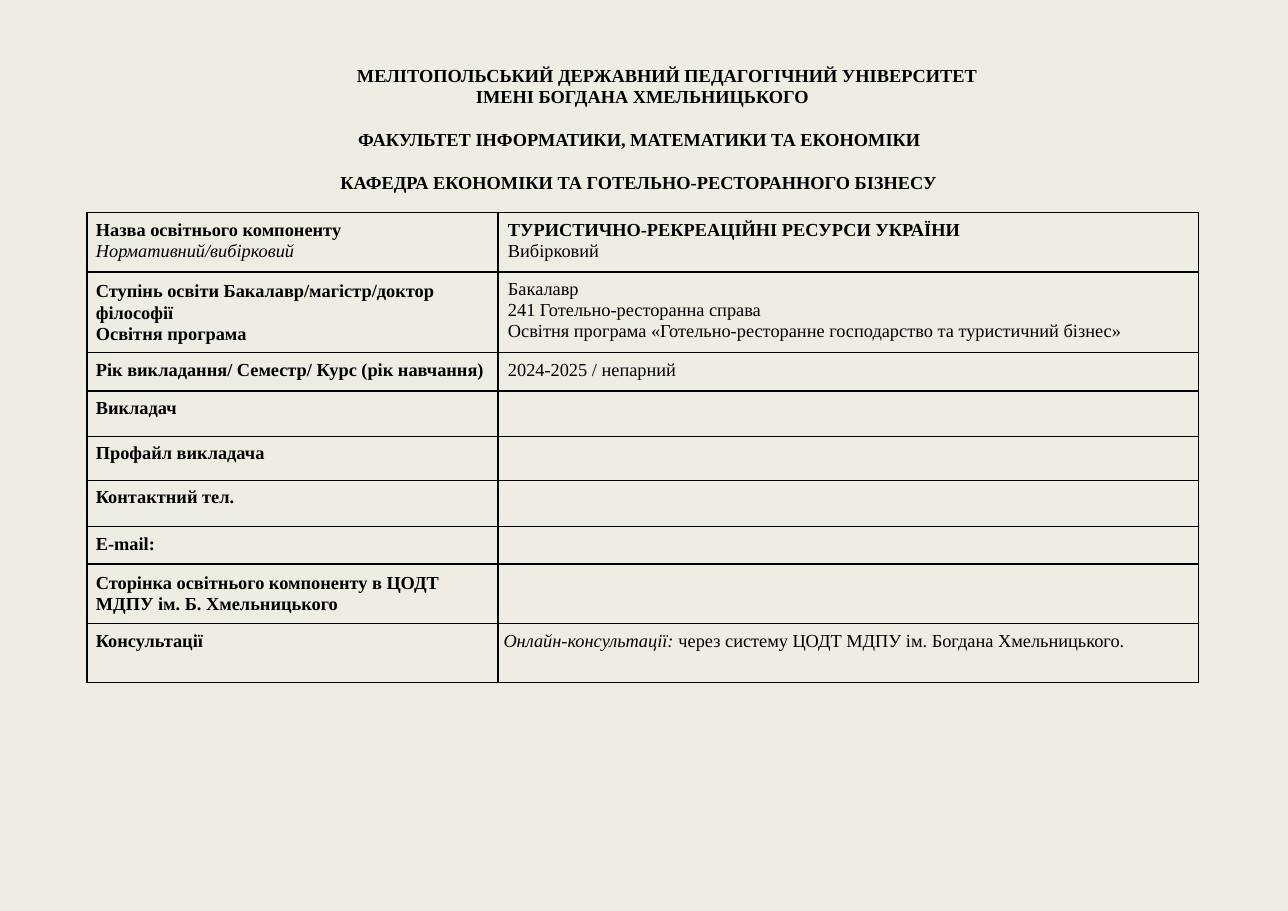
from dataclasses import dataclass

from lxml.etree import SubElement
from pptx import Presentation
from pptx.dml.color import RGBColor
from pptx.enum.text import MSO_ANCHOR, MSO_AUTO_SIZE, PP_ALIGN
from pptx.oxml.ns import qn
from pptx.util import Pt

EMU_PER_PX = 9144


@dataclass(frozen=True)
class Theme:
    """Colours, font and sizes of the slide."""
    paper: str = "EFEDE3"
    ink: str = "000000"
    font: str = "Times New Roman"
    size: float = 12
    border: float = 1
    leading: float = 13.8


THEME = Theme()
COLUMNS = (373, 636)
HEADING = (
    ("МЕЛІТОПОЛЬСЬКИЙ ДЕРЖАВНИЙ ПЕДАГОГІЧНИЙ УНІВЕРСИТЕТ ІМЕНІ БОГДАНА ХМЕЛЬНИЦЬКОГО",
     dict(margin=124, indent=-108, leading=13.8, before=1.9)),
    ("ФАКУЛЬТЕТ ІНФОРМАТИКИ, МАТЕМАТИКИ ТА ЕКОНОМІКИ "
     "КАФЕДРА ЕКОНОМІКИ ТА ГОТЕЛЬНО-РЕСТОРАННОГО БІЗНЕСУ",
     dict(margin=1, indent=16, leading=27.6, before=0.8)),
)
BOLD, ITALIC, PLAIN = dict(bold=True), dict(italic=True), {}
LOW = dict(top=8, before=5.5)
ROWS = (
    (54, [[("Назва освітнього компоненту", BOLD)], [("Нормативний/вибірковий", ITALIC)]],
     [[("ТУРИСТИЧНО-РЕКРЕАЦІЙНІ РЕСУРСИ УКРАЇНИ", BOLD)], [("Вибірковий", PLAIN)]], {}),
    (73, [[("Ступінь освіти Бакалавр/магістр/доктор філософії", BOLD)],
          [("Освітня програма", BOLD)]],
     [[("Бакалавр", PLAIN)], [("241 Готельно-ресторанна справа", PLAIN)],
      [("Освітня програма «Готельно-ресторанне господарство та туристичний бізнес»", PLAIN)]],
     LOW),
    (35, [[("Рік викладання/ Семестр/ Курс (рік навчання)", BOLD)]],
     [[("2024-2025 / непарний", PLAIN)]], {}),
    (41, [[("Викладач", BOLD)]], [], {}),
    (40, [[("Профайл викладача", BOLD)]], [], {}),
    (42, [[("Контактний тел.", BOLD)]], [], {}),
    (34, [[("E-mail:", BOLD)]], [], {}),
    (54, [[("Сторінка освітнього компоненту в ЦОДТ МДПУ ім. Б. Хмельницького", BOLD)]], [], LOW),
    (54, [[("Консультації", BOLD)]],
     [[("Онлайн-консультації: ", ITALIC),
       ("через систему ЦОДТ МДПУ ім. Богдана Хмельницького.", PLAIN)]], dict(right_margin=5)),
)


def px(n):
    """Turn whole px into EMU."""
    return n * EMU_PER_PX


def add_text(p, text, bold=False, italic=False):
    """Add a formatted run to a paragraph."""
    r = p.add_run()
    r.text = text
    f = r.font
    f.name, f.size, f.bold, f.italic = THEME.font, Pt(THEME.size), bold, italic
    f.color.rgb = RGBColor.from_string(THEME.ink)


def add_paragraph(tf, i, runs, margin=0, indent=0, leading=THEME.leading, before=0):
    """Fill paragraph i of a text frame with runs."""
    p = tf.add_paragraph() if i else tf.paragraphs[0]
    p.alignment = PP_ALIGN.LEFT
    p.line_spacing, p.space_before = Pt(leading), Pt(before)
    pPr = p._p.get_or_add_pPr()
    pPr.set("marL", str(px(margin)))
    pPr.set("indent", str(px(indent)))
    for text, style in runs:
        add_text(p, text, **style)


def add_heading(s):
    """Move the title placeholder and write the university heading."""
    sp = s.shapes.title
    sp.left, sp.top, sp.width, sp.height = map(px, (308, 56, 583, 119))
    tf = sp.text_frame
    tf.word_wrap, tf.auto_size = True, MSO_AUTO_SIZE.NONE
    tf.vertical_anchor = MSO_ANCHOR.TOP
    tf.margin_left = tf.margin_right = tf.margin_bottom = 0
    tf.margin_top = px(3)
    for i, (text, layout) in enumerate(HEADING):
        add_paragraph(tf, i, [(text, BOLD)], **layout)


def add_borders(cell):
    """Draw a solid line on all four sides of a cell."""
    tcPr = cell._tc.get_or_add_tcPr()
    for i, side in enumerate(("a:lnL", "a:lnR", "a:lnT", "a:lnB")):
        ln = SubElement(tcPr, qn(side), w=str(Pt(THEME.border)))
        fill = SubElement(ln, qn("a:solidFill"))
        SubElement(fill, qn("a:srgbClr"), val=THEME.ink)
        tcPr.insert(i, ln)


def fill_cell(cell, lines, margin, top=6, before=4.5):
    """Write lines into a clear, bordered cell."""
    cell.fill.background()
    add_borders(cell)
    cell.margin_left = cell.margin_right = cell.margin_bottom = 0
    cell.margin_top = px(top if lines else 0)
    cell.vertical_anchor = MSO_ANCHOR.TOP
    for i, runs in enumerate(lines):
        add_paragraph(cell.text_frame, i, runs, margin=margin, before=0 if i else before)


def add_course_table(s):
    """Add the two-column table of course details."""
    heights = [row[0] for row in ROWS]
    box = map(px, (79, 193, sum(COLUMNS), sum(heights)))
    table = s.shapes.add_table(len(ROWS), len(COLUMNS), *box).table
    table.first_row = table.horz_banding = False
    for column, width in zip(table.columns, COLUMNS):
        column.width = px(width)
    for i, (height, label, value, layout) in enumerate(ROWS):
        table.rows[i].height = px(height)
        spacing = {k: v for k, v in layout.items() if k != "right_margin"}
        fill_cell(table.cell(i, 0), label, 8, **spacing)
        fill_cell(table.cell(i, 1), value, layout.get("right_margin", 9), before=4.3)


def main():
    """Build and save the slide."""
    prs = Presentation()
    prs.slide_width, prs.slide_height = px(1169), px(827)
    s = prs.slides.add_slide(prs.slide_layouts[5])
    s.background.fill.solid()
    s.background.fill.fore_color.rgb = RGBColor.from_string(THEME.paper)
    add_heading(s)
    add_course_table(s)
    prs.save("out.pptx")


if __name__ == "__main__":
    main()
